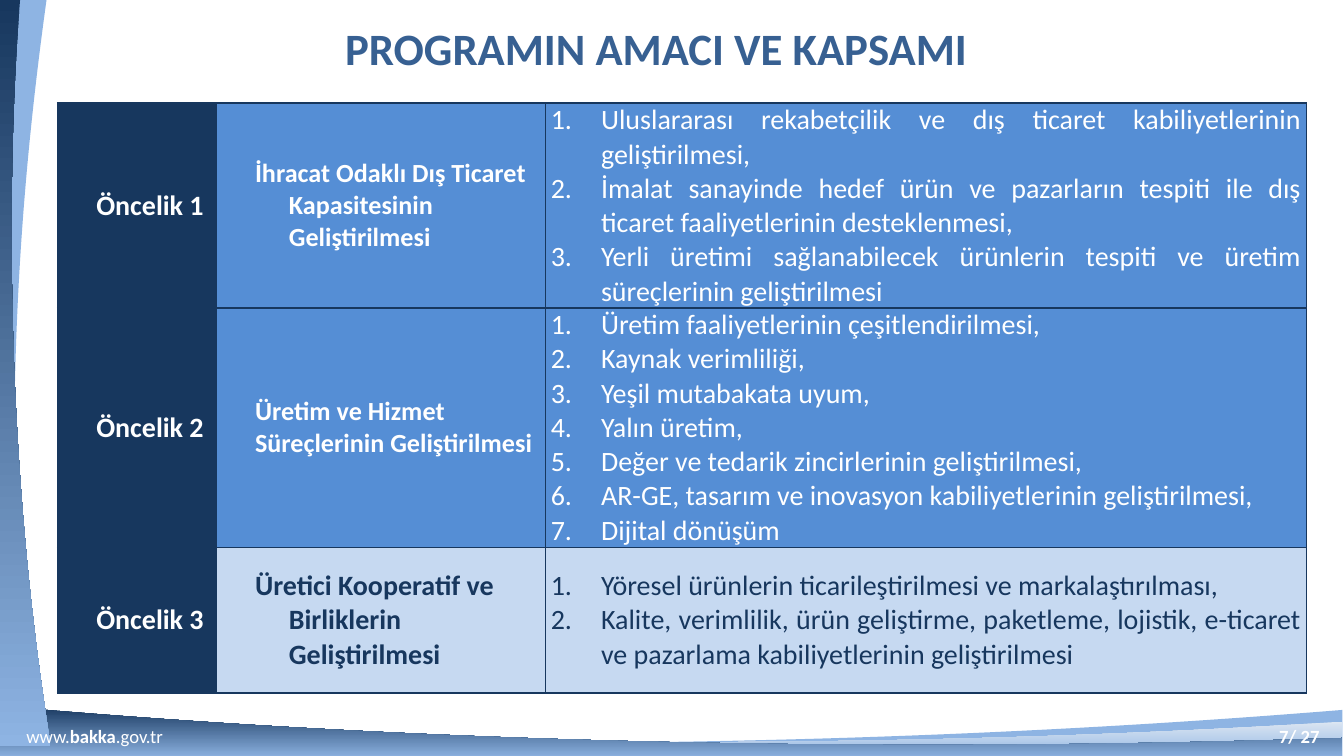
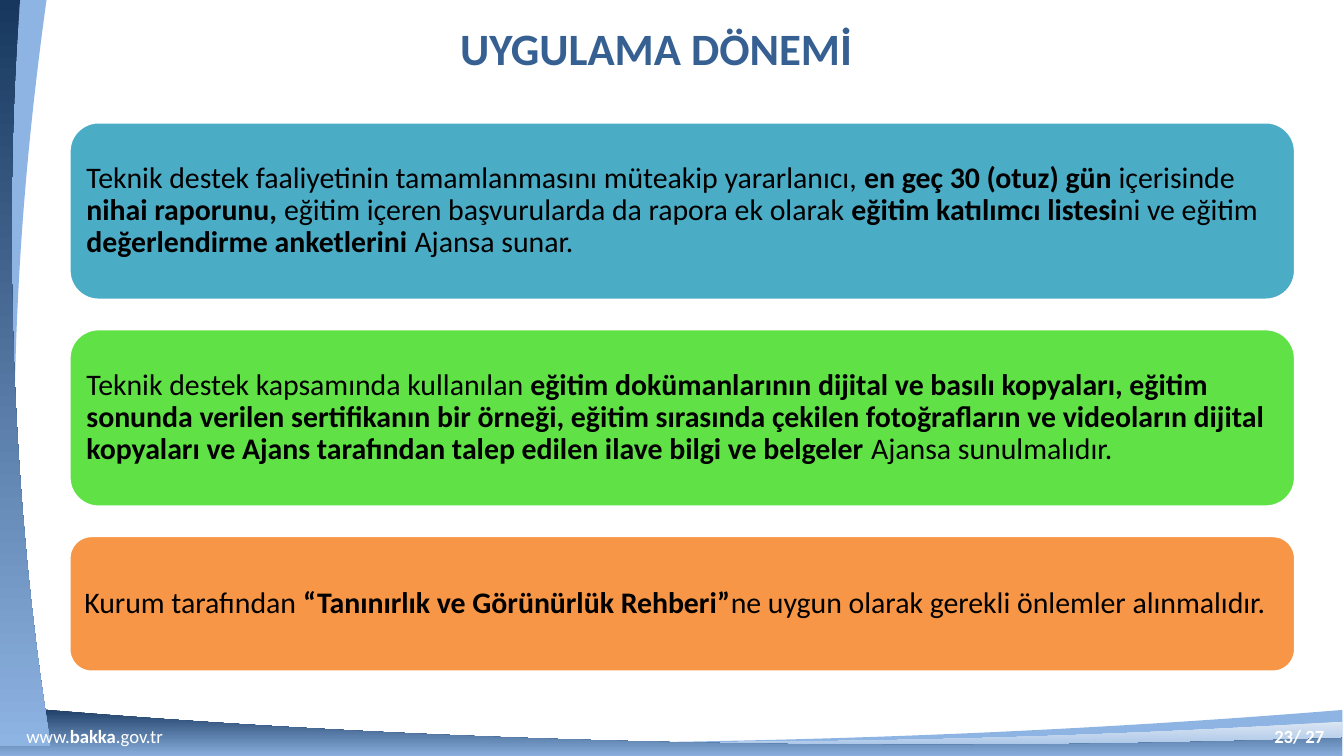
from pptx import Presentation
from pptx.dml.color import RGBColor
from pptx.enum.shapes import MSO_SHAPE
from pptx.enum.text import MSO_ANCHOR, PP_ALIGN
from pptx.oxml.ns import qn
from pptx.util import Cm, Pt
from lxml import etree

MIDDLE = MSO_ANCHOR.MIDDLE
LEFT, CENTER, JUSTIFY = PP_ALIGN.LEFT, PP_ALIGN.CENTER, PP_ALIGN.JUSTIFY
ROUNDED = MSO_SHAPE.ROUNDED_RECTANGLE

FONT = "Calibri"
NAVY, BLUE, SKY, ICE = "17375E", "558ED5", "8EB4E3", "DCE6F2"
PALE, TITLE_BLUE, WHITE, BLACK = "C6D9F1", "376092", "FFFFFF", "000000"
PAGE_TOTAL = 27

# Each wave: edge as two cubic curves (cm within its box), then its fill colours.
BOTTOM_BOX = (-0.03, 13.34, 25.4, 1)
BOTTOM_WAVES = [
    ([(0, 0.41), (2.77, 0.51), (5.56, 0.69), (9.25, 0.71),
      (15.29, 0.71), (20.47, 0.48), (25.4, 0.08)], [SKY]),
    ([(0, 0.3), (4.01, 0.56), (8.28, 0.69), (12.7, 0.69),
      (17.15, 0.69), (21.41, 0.56), (25.4, 0.3)], [ICE, SKY]),
    ([(0, 0), (5.33, 0.48), (11.3, 0.74), (17.58, 0.74),
      (20.27, 0.74), (22.89, 0.69), (25.4, 0.61)], [NAVY, SKY]),
]
SIDE_BOX = (-0.03, 0, 1, 14.1)
SIDE_WAVES = [
    ([(0.69, 0), (0.46, 2.21), (0.3, 4.6), (0.3, 7.06),
      (0.3, 9.5), (0.46, 11.89), (0.69, 14.1)], [ICE, SKY]),
    ([(0.91, 0), (0.53, 2.74), (0.28, 5.61), (0.3, 8.97),
      (0.3, 11), (0.51, 12.57), (0.58, 14.1)], [SKY]),
    ([(0.41, 0), (0.3, 1.4), (0.25, 2.87), (0.25, 4.34),
      (0.25, 7.82), (0.51, 11.13), (0.99, 14.1)], [NAVY, SKY]),
]

# Label, theme, theme size, goals, fill, text colour, row height.
PRIORITIES = [
    ("Öncelik 1", ["İhracat Odaklı Dış Ticaret Kapasitesinin Geliştirilmesi"], 14,
     ["Uluslararası rekabetçilik ve dış ticaret kabiliyetlerinin geliştirilmesi,",
      "İmalat sanayinde hedef ürün ve pazarların tespiti ile dış ticaret "
      "faaliyetlerinin desteklenmesi,",
      "Yerli üretimi sağlanabilecek ürünlerin tespiti ve üretim süreçlerinin "
      "geliştirilmesi"], BLUE, WHITE, 3.87),
    ("Öncelik 2", ["Üretim ve Hizmet", "Süreçlerinin Geliştirilmesi"], 14,
     ["Üretim faaliyetlerinin çeşitlendirilmesi,", "Kaynak verimliliği,",
      "Yeşil mutabakata uyum,", "Yalın üretim,",
      "Değer ve tedarik zincirlerinin geliştirilmesi,",
      "AR-GE, tasarım ve inovasyon kabiliyetlerinin geliştirilmesi,",
      "Dijital dönüşüm"], BLUE, WHITE, 4.53),
    ("Öncelik 3", ["Üretici Kooperatif ve Birliklerin Geliştirilmesi"], 15,
     ["Yöresel ürünlerin ticarileştirilmesi ve markalaştırılması,",
      "Kalite, verimlilik, ürün geliştirme, paketleme, lojistik, e-ticaret ve "
      "pazarlama kabiliyetlerinin geliştirilmesi"], PALE, NAVY, 2.75),
]
COLUMN_WIDTHS = (3, 6.22, 14.38)

# Asterisks enclose the bold words.
OBLIGATIONS = [
    ("Teknik destek faaliyetinin tamamlanmasını müteakip yararlanıcı, *en geç 30 (otuz) "
     "gün* içerisinde *nihai raporunu, *eğitim içeren başvurularda da rapora ek olarak "
     "*eğitim katılımcı listesi*ni ve eğitim *değerlendirme anketlerini *Ajansa sunar.",
     "4BACC6", 3.38),
    ("Teknik destek kapsamında kullanılan *eğitim dokümanlarının dijital ve basılı "
     "kopyaları, eğitim sonunda verilen sertifikanın bir örneği, eğitim sırasında çekilen "
     "fotoğrafların ve videoların dijital kopyaları ve Ajans tarafından talep edilen "
     "ilave bilgi ve belgeler* Ajansa sunulmalıdır.", "60E146", 3.38),
    ("Kurum tarafından *“Tanınırlık ve Görünürlük Rehberi”*ne uygun olarak gerekli "
     "önlemler alınmalıdır.", "F79646", 2.59),
]


def rgb(code):
    return RGBColor.from_string(code)


def set_all(target, **values):
    for attribute, value in values.items():
        setattr(target, attribute, value)


def set_insets(target, side, vertical):
    set_all(target, margin_left=Cm(side), margin_right=Cm(side),
            margin_top=Cm(vertical), margin_bottom=Cm(vertical))


def write(paragraph, marked, size, color, bold=False):
    """Add runs, switching bold at each asterisk."""
    for i, part in enumerate(marked.split("*")):
        if part:
            run = paragraph.add_run()
            run.text = part
            set_all(run.font, name=FONT, size=Pt(size), bold=bold or i % 2 == 1)
            run.font.color.rgb = rgb(color)


def bend_edge(wave):
    """Turn the first six line segments into two cubic curves."""
    lines = list(wave._element.iter(qn("a:lnTo")))
    for start in (0, 3):
        curve = etree.Element(qn("a:cubicBezTo"))
        lines[start].addprevious(curve)
        for line in lines[start:start + 3]:
            curve.append(line[0])
            line.getparent().remove(line)


def add_waves(slide, box, waves, corners):
    """Return a group of waves, each closed through the corners of its box."""
    left, top = box[:2]
    group = slide.shapes.add_group_shape()
    for edge, colors in waves:
        placed = [(Cm(left + x), Cm(top + y)) for x, y in edge + corners]
        builder = group.shapes.build_freeform(*placed[0])
        builder.add_line_segments(placed[1:], close=True)
        wave = builder.convert_to_shape()
        bend_edge(wave)
        wave.shadow.inherit = False
        wave.line.fill.background()
        if len(colors) == 1:
            wave.fill.solid()
            wave.fill.fore_color.rgb = rgb(colors[0])
        else:
            wave.fill.gradient()
            wave.fill.gradient_angle = 270
            for stop, color in zip(wave.fill.gradient_stops, colors):
                stop.color.rgb = rgb(color)
    return group


def add_footer_text(slide, box, marked, align, bold=False):
    footer = slide.shapes.add_textbox(*map(Cm, box))
    frame = footer.text_frame
    frame.word_wrap = True
    set_insets(frame, 0, 0)
    frame.paragraphs[0].alignment = align
    write(frame.paragraphs[0], marked, 10, WHITE, bold)
    return footer


def decorate_layout(layout, slide):
    """Draw the waves and the address on the slide, then hand them to its layout."""
    for placeholder in list(layout.placeholders)[1:]:
        placeholder._element.getparent().remove(placeholder._element)
    width, height = BOTTOM_BOX[2:]
    for part in (
        add_waves(slide, BOTTOM_BOX, BOTTOM_WAVES, [(width, height), (0, height)]),
        add_waves(slide, SIDE_BOX, SIDE_WAVES, [(0, SIDE_BOX[3]), (0, 0)]),
        add_footer_text(slide, (0.5, 13.7, 3.4, 0.43), "www.*bakka*.gov.tr", LEFT),
    ):
        layout.shapes._spTree.append(part._element)


def add_page(deck, layout, title, number):
    slide = deck.slides.add_slide(layout)
    add_footer_text(slide, (23.92, 13.7, 1.27, 0.43), f"{number}/ {PAGE_TOTAL}", CENTER, True)
    heading = slide.shapes.title
    set_all(heading, left=Cm(2.1), top=Cm(0.25), width=Cm(20.6), height=Cm(1.3))
    frame = heading.text_frame
    frame.vertical_anchor = MIDDLE
    set_insets(frame, 0, 0)
    frame.paragraphs[0].alignment = CENTER
    write(frame.paragraphs[0], title, 24, TITLE_BLUE, True)
    return slide


def border_cell(cell):
    properties = cell._tc.get_or_add_tcPr()
    for side in ("lnL", "lnR", "lnT", "lnB"):
        line = etree.SubElement(properties, qn(f"a:{side}"), w=str(Pt(1)))
        fill = etree.SubElement(line, qn("a:solidFill"))
        etree.SubElement(fill, qn("a:srgbClr"), val=NAVY)


def fill_cell(cell, lines, fill, color, size, indent, align=LEFT, numbered=False):
    """Write paragraphs with a (left, first line) indent; numbered ones are not bold."""
    border_cell(cell)
    cell.fill.solid()
    cell.fill.fore_color.rgb = rgb(fill)
    cell.vertical_anchor = MIDDLE
    set_insets(cell, 0.1, 0)
    frame = cell.text_frame
    for i, line in enumerate(lines):
        paragraph = frame.add_paragraph() if i else frame.paragraphs[0]
        paragraph.alignment = align
        properties = paragraph._p.get_or_add_pPr()
        for name, length in zip(("marL", "indent"), indent):
            properties.set(name, str(Cm(length)))
        if numbered:
            etree.SubElement(properties, qn("a:buAutoNum"), type="arabicPeriod")
        write(paragraph, line, size, color, not numbered)


def add_priority_table(slide, left, top):
    heights = [row[-1] for row in PRIORITIES]
    table = slide.shapes.add_table(
        len(heights), len(COLUMN_WIDTHS), Cm(left), Cm(top),
        Cm(sum(COLUMN_WIDTHS)), Cm(sum(heights))).table
    set_all(table, first_row=False, horz_banding=False)
    for column, width in zip(table.columns, COLUMN_WIDTHS):
        column.width = Cm(width)
    hanging = (1.27, -0.64)
    for row, priority in zip(table.rows, PRIORITIES):
        label, theme, theme_size, goals, fill, color, height = priority
        row.height = Cm(height)
        label_cell, theme_cell, goals_cell = row.cells
        fill_cell(label_cell, [label], NAVY, WHITE, 15, hanging)
        fill_cell(theme_cell, theme, fill, color, theme_size, hanging)
        fill_cell(goals_cell, goals, fill, color, 15, (0.95, -0.95), JUSTIFY, True)


def add_obligation_cards(slide, left, top, width, gap):
    for marked, color, height in OBLIGATIONS:
        card = slide.shapes.add_shape(ROUNDED, Cm(left), Cm(top), Cm(width), Cm(height))
        card.shadow.inherit = False
        card.fill.solid()
        card.fill.fore_color.rgb = rgb(color)
        card.line.color.rgb = rgb(WHITE)
        card.line.width = Pt(2)
        frame = card.text_frame
        set_all(frame, word_wrap=True, vertical_anchor=MIDDLE)
        set_insets(frame, 0.17, 0.18)
        set_all(frame.paragraphs[0], alignment=LEFT, line_spacing=0.9)
        write(frame.paragraphs[0], marked, 16, BLACK)
        top += height + gap


def main():
    deck = Presentation()
    set_all(deck, slide_width=Cm(25.4), slide_height=Cm(14.29))
    layout = deck.slide_layouts[5]
    purpose = add_page(deck, layout, "PROGRAMIN AMACI VE KAPSAMI", 7)
    decorate_layout(layout, purpose)
    add_priority_table(purpose, 1.09, 1.95)
    period = add_page(deck, layout, "UYGULAMA DÖNEMİ", 23)
    add_obligation_cards(period, 1.3, 2.3, 23.19, 0.53)
    deck.save("out.pptx")


if __name__ == "__main__":
    main()
